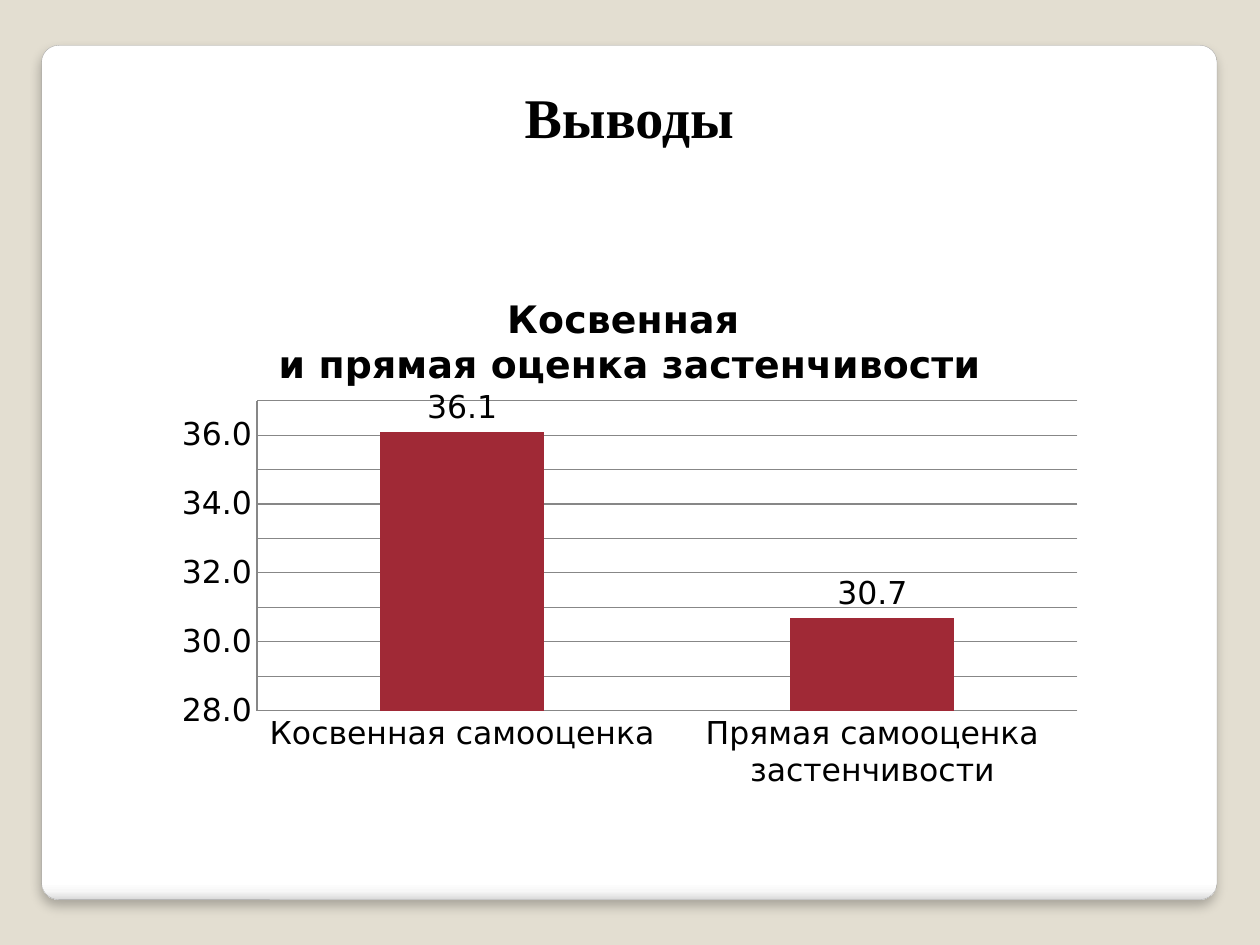
from lxml.etree import SubElement
from pptx import Presentation
from pptx.chart.data import CategoryChartData
from pptx.dml.color import RGBColor
from pptx.enum.chart import XL_CHART_TYPE as ChartType, XL_LABEL_POSITION as LabelPosition
from pptx.enum.chart import XL_TICK_MARK as TickMark
from pptx.enum.shapes import MSO_SHAPE as Shape
from pptx.enum.text import MSO_ANCHOR as Anchor, PP_ALIGN as Align
from pptx.oxml import parse_xml
from pptx.oxml.ns import nsdecls, qn
from pptx.util import Inches, Pt

COLORS = {
    "background": "E3DED1",
    "card": "FFFFFF",
    "card_shade": "F7F7F7",
    "card_edge": "DADADA",
    "card_line": "A4A4A4",
    "text": "000000",
    "bar": "A02936",
    "grid": "878787",
}


def rgb(name):
    return RGBColor.from_string(COLORS[name])


def set_font(font, name, size, bold=False):
    font.name, font.size, font.bold = name, Pt(size), bold
    font.color.rgb = rgb("text")


def set_line(line, color, width):
    line.color.rgb = rgb(color)
    line.width = Pt(width)


def add_card(slide):
    card = slide.shapes.add_shape(
        Shape.ROUNDED_RECTANGLE, Inches(0.33), Inches(0.36), Inches(9.33), Inches(6.78))
    card.adjustments[0] = 0.02
    set_line(card.line, "card_line", 0.16)

    # Vertical gradient that darkens only at the bottom edge
    stops = [(0, "card"), (98, "card"), (99, "card_shade"), (100, "card_edge")]
    stop_xml = "".join(
        f'<a:gs pos="{pos * 1000}"><a:srgbClr val="{COLORS[color]}"/></a:gs>'
        for pos, color in stops)
    gradient = parse_xml(
        f'<a:gradFill {nsdecls("a")} rotWithShape="1"><a:gsLst>{stop_xml}</a:gsLst>'
        '<a:lin ang="5400000" scaled="0"/></a:gradFill>')
    properties = card._element.spPr
    properties.find(qn("a:ln")).addprevious(gradient)

    # Soft shadow below the card
    properties.append(parse_xml(
        f'<a:effectLst {nsdecls("a")}><a:outerShdw blurRad="{Pt(6)}" dist="{Pt(4)}" '
        f'dir="5400000" rotWithShape="0"><a:srgbClr val="{COLORS["text"]}">'
        '<a:alpha val="25000"/></a:srgbClr></a:outerShdw></a:effectLst>'))

    # Send behind the title
    slide.shapes._spTree.insert(2, card._element)


def set_title(slide, text):
    title = slide.shapes.title
    title.left, title.top = Inches(1.06), Inches(0.6)
    title.width, title.height = Inches(7.87), Inches(0.64)
    frame = title.text_frame
    frame.text = text
    frame.word_wrap = True
    frame.vertical_anchor = Anchor.MIDDLE
    heading = frame.paragraphs[0]
    heading.alignment = Align.CENTER
    set_font(heading.font, "Times New Roman", 32, bold=True)


def set_plot_layout(chart, **fractions):
    plot_area = chart._chartSpace.chart.plotArea
    layout = plot_area.find(qn("c:layout"))
    if layout is None:
        layout = SubElement(plot_area, qn("c:layout"))
        plot_area.insert(0, layout)
    manual = SubElement(layout, qn("c:manualLayout"))
    settings = {"layoutTarget": "inner", "xMode": "edge", "yMode": "edge", **fractions}
    for tag, value in settings.items():
        SubElement(manual, qn(f"c:{tag}")).set("val", str(value))


def add_shyness_chart(slide):
    scores = CategoryChartData(number_format="0.0")
    scores.categories = ["Косвенная самооценка", "Прямая самооценка застенчивости"]
    scores.add_series("Series 1", [36.1, 30.7])
    chart = slide.shapes.add_chart(
        ChartType.COLUMN_CLUSTERED, Inches(1.3), Inches(2.18),
        Inches(7.4), Inches(4.17), scores).chart
    set_font(chart.font, "DejaVu Sans", 18)
    chart.has_legend = False
    set_plot_layout(chart, x=0.1, y=0.24, w=0.88, h=0.59)

    # Chart title
    chart.has_title = True
    chart.chart_title.include_in_layout = False
    heading = chart.chart_title.text_frame
    heading.text = "Косвенная \nи прямая оценка застенчивости"
    for line in heading.paragraphs:
        set_font(line.font, "DejaVu Sans", 21.6, bold=True)

    # Bars and their values
    plot = chart.plots[0]
    plot.gap_width = 150
    plot.vary_by_categories = False
    bars = plot.series[0].format.fill
    bars.solid()
    bars.fore_color.rgb = rgb("bar")
    plot.has_data_labels = True
    labels = plot.data_labels
    labels.show_value = True
    labels.position = LabelPosition.OUTSIDE_END
    labels.number_format, labels.number_format_is_linked = "0.0", False
    set_font(labels.font, "DejaVu Sans", 18)

    # Axes
    for axis in (chart.category_axis, chart.value_axis):
        axis.major_tick_mark = axis.minor_tick_mark = TickMark.NONE
        set_line(axis.format.line, "grid", 0.75)
    score_axis = chart.value_axis
    score_axis.minimum_scale, score_axis.maximum_scale = 28, 37
    score_axis.major_unit = 1
    score_axis.tick_labels.number_format = "0.0"
    score_axis.tick_labels.number_format_is_linked = False
    set_line(score_axis.major_gridlines.format.line, "grid", 0.75)


def main():
    deck = Presentation()
    deck.slide_width, deck.slide_height = Inches(10), Inches(7.5)
    slide = deck.slides.add_slide(deck.slide_layouts[5])
    slide.background.fill.solid()
    slide.background.fill.fore_color.rgb = rgb("background")
    add_card(slide)
    set_title(slide, "Выводы")
    add_shyness_chart(slide)
    deck.save("out.pptx")


if __name__ == "__main__":
    main()
